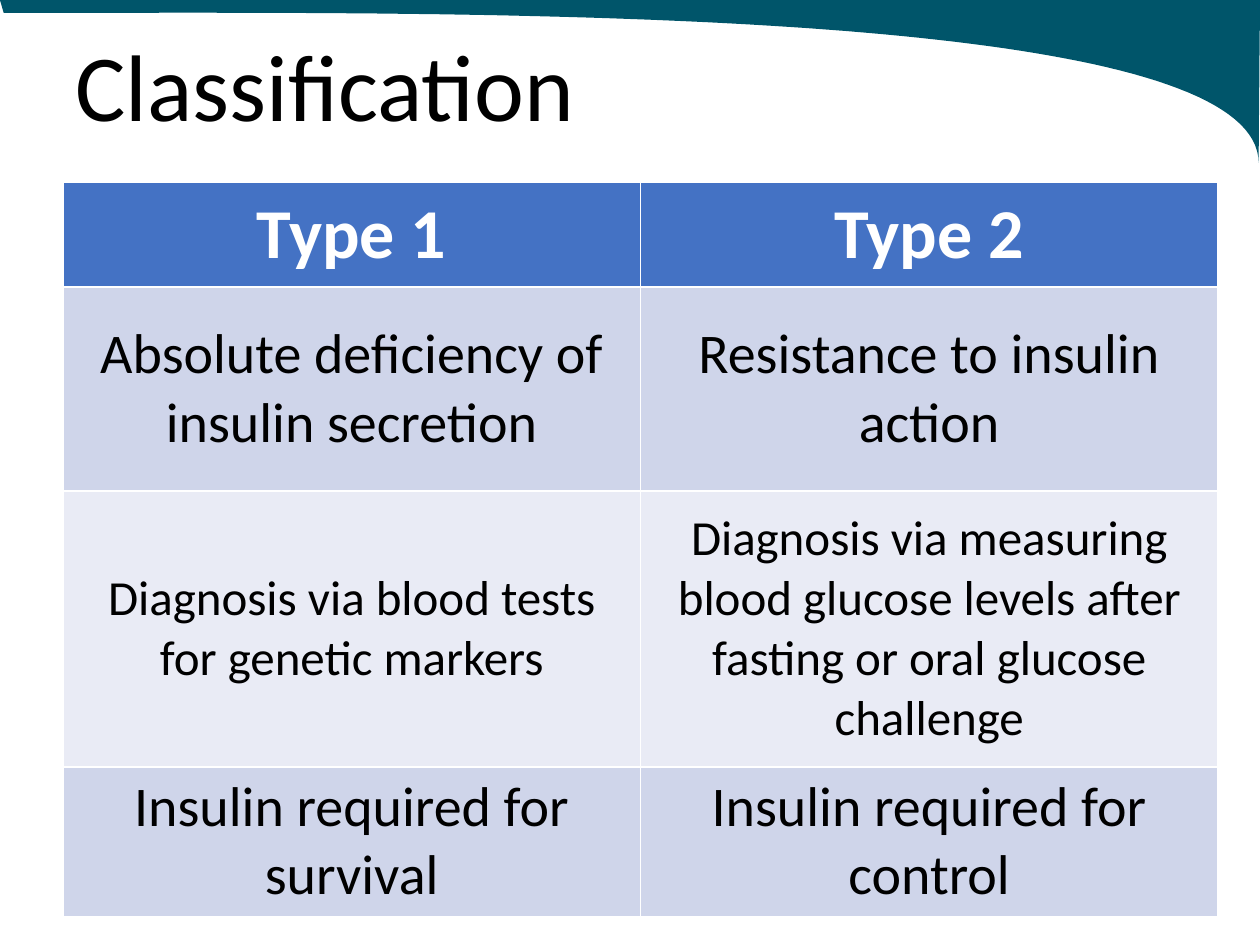
from pptx import Presentation
from pptx.dml.color import RGBColor
from pptx.enum.text import MSO_ANCHOR, MSO_AUTO_SIZE, PP_ALIGN
from pptx.util import Pt

FONT = "Calibri"
COLORS = {"swoosh": "00556A", "header": "4472C4", "odd": "CFD5EA",
          "even": "E9EBF5", "white": "FFFFFF", "black": "000000"}
ROWS = [
    ("Type 1", "Type 2", 59.75, 40, "header"),
    ("Absolute deficiency of insulin secretion", "Resistance to insulin action",
     116.5, 32, "odd"),
    ("Diagnosis via blood tests for genetic markers",
     "Diagnosis via measuring blood glucose levels after fasting or oral glucose challenge",
     157.75, 28, "even"),
    ("Insulin required for survival", "Insulin required for control", 84, 32, "odd"),
]


def rgb(name):
    """Return the named colour."""
    return RGBColor.from_string(COLORS[name])


def add_run(p, text, size, color, bold=False):
    """Add one formatted run to a paragraph."""
    r = p.add_run()
    r.text = text
    r.font.name, r.font.size, r.font.bold = FONT, Pt(size), bold
    r.font.color.rgb = rgb(color)


def bezier(points, steps):
    """Return points along a cubic curve, without its start."""
    curve = []
    for i in range(1, steps + 1):
        t = i / steps
        weights = ((1 - t) ** 3, 3 * t * (1 - t) ** 2, 3 * t ** 2 * (1 - t), t ** 3)
        curve.append(tuple(sum(w * pt[axis] for w, pt in zip(weights, points))
                           for axis in (0, 1)))
    return curve


def add_swoosh(s, left, top, width, height):
    """Draw the curved band across the top of the box."""
    right, tip, start = (1, 0), (0.999, 1), (0.003, 0.08)
    outline = [right]
    outline += bezier([right, (1, 0.11), (0.999, 0.89), tip], 8)
    outline += bezier([tip, (0.998, 0), (0.336, 0.08), start], 80)
    builder = s.shapes.build_freeform(Pt(left), Pt(top))
    builder.add_line_segments(
        [(Pt(left + x * width), Pt(top + y * height)) for x, y in outline], close=True)
    sp = builder.convert_to_shape()
    sp.shadow.inherit = False
    sp.fill.solid()
    sp.fill.fore_color.rgb = rgb("swoosh")
    sp.line.fill.background()


def add_title(s, left, top, width, height):
    """Place and format the title placeholder."""
    sp = s.shapes.title
    sp.left, sp.top, sp.width, sp.height = Pt(left), Pt(top), Pt(width), Pt(height)
    tf = sp.text_frame
    tf.word_wrap = True
    tf.auto_size = MSO_AUTO_SIZE.NONE
    tf.vertical_anchor = MSO_ANCHOR.MIDDLE
    p = tf.paragraphs[0]
    p.alignment, p.line_spacing = PP_ALIGN.LEFT, 0.9
    add_run(p, "Classification", 54, "black")


def add_comparison(s, left, top, width, height):
    """Add the table that compares the two types."""
    table = s.shapes.add_table(len(ROWS), 2, Pt(left), Pt(top), Pt(width), Pt(height)).table
    for column in table.columns:
        column.width = Pt(width / 2)
    for i, (*texts, row_height, size, fill) in enumerate(ROWS):
        table.rows[i].height = Pt(row_height)
        header = i == 0
        for cell, text in zip(table.rows[i].cells, texts):
            cell.fill.solid()
            cell.fill.fore_color.rgb = rgb(fill)
            cell.vertical_anchor = MSO_ANCHOR.MIDDLE
            p = cell.text_frame.paragraphs[0]
            p.alignment = PP_ALIGN.CENTER
            add_run(p, text, size, "white" if header else "black", header)


def main():
    """Build and save the slide."""
    prs = Presentation()
    prs.slide_width, prs.slide_height = Pt(720), Pt(540)
    s = prs.slides.add_slide(prs.slide_layouts[5])
    add_swoosh(s, 0, 0, 720, 93)
    add_title(s, 36, 0, 620.5, 104)
    add_comparison(s, 36, 104.25, 660, 418)
    prs.save("out.pptx")


if __name__ == "__main__":
    main()
